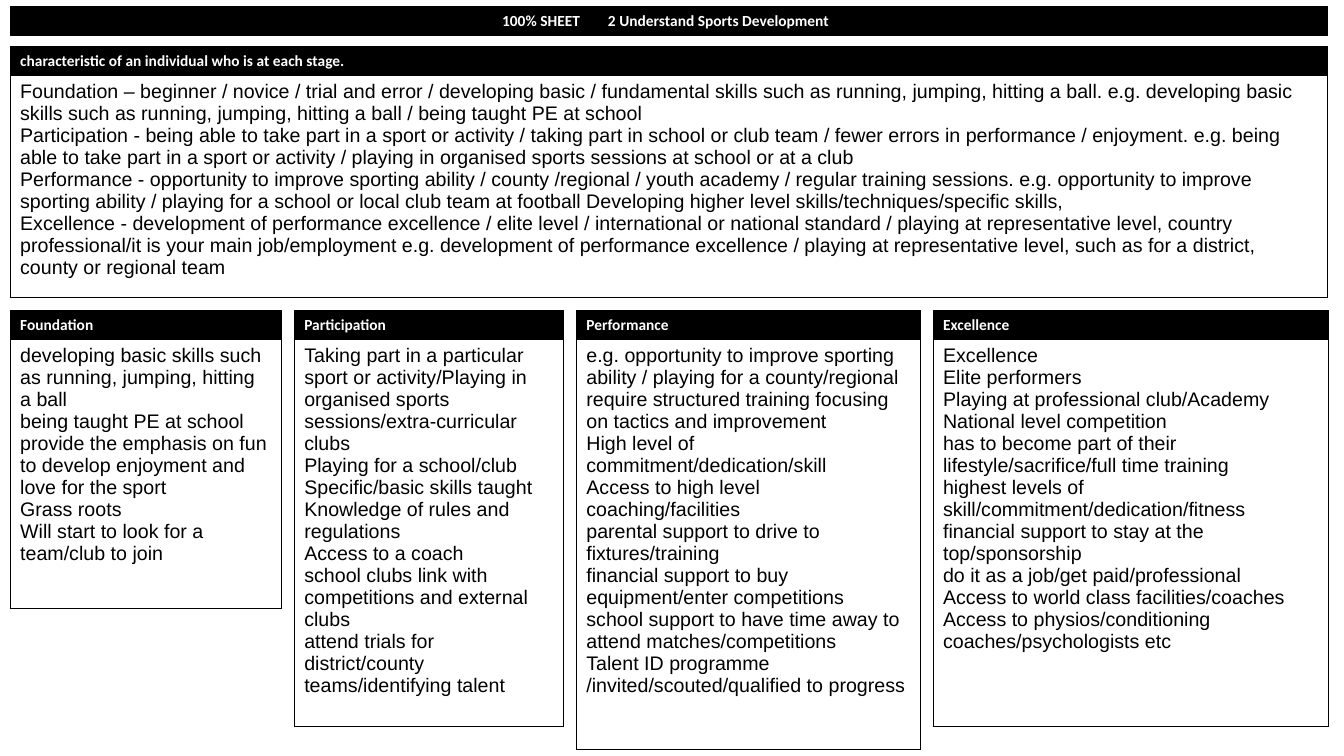
import dataclasses

import lxml.etree
import pptx
import pptx.dml.color
import pptx.enum.text
import pptx.oxml.ns
import pptx.util


@dataclasses.dataclass(frozen=True)
class Theme:
    """Colours, fonts and type sizes of the sheet."""
    black: str = "000000"
    white: str = "FFFFFF"
    heading_font: str = "Calibri"
    body_font: str = "Arial"
    heading_size: float = 11
    body_size: float = 14
    line_width: float = 0.75


@dataclasses.dataclass(frozen=True)
class Box:
    """An area of the slide, in percent of its width and height."""
    left: float
    top: float
    width: float
    height: float

    def place(self):
        """Return left, top, width and height as slide lengths."""
        return [int(share * side / 100) for share, side in
                zip((self.left, self.top, self.width, self.height),
                    (SLIDE_WIDTH, SLIDE_HEIGHT) * 2)]


THEME = Theme()
SLIDE_WIDTH = pptx.util.Inches(13.33)
SLIDE_HEIGHT = pptx.util.Inches(7.5)
HEADER_HEIGHT = pptx.util.Inches(0.28)
MARGIN, CONTENT_WIDTH, GAP = 0.75, 98.05, 0.96
STAGES_TOP = 41.07

TITLE = "100% SHEET\t2 Understand Sports Development"

OVERVIEW_HEADING = "characteristic of an individual who is at each stage."
OVERVIEW = [
    "Foundation – beginner / novice / trial and error / developing basic / fundamental skills such as "
    "running, jumping, hitting a ball. e.g. developing basic skills such as running, jumping, hitting "
    "a ball / being taught PE at school",
    "Participation - being able to take part in a sport or activity / taking part in school or club "
    "team / fewer errors in performance / enjoyment. e.g. being able to take part in a sport or "
    "activity / playing in organised sports sessions at school or at a club",
    "Performance - opportunity to improve sporting ability / county /regional / youth academy / "
    "regular training sessions. e.g. opportunity to improve sporting ability / playing for a school "
    "or local club team at football Developing higher level skills/techniques/specific skills,",
    "Excellence - development of performance excellence / elite level / international or national "
    "standard / playing at representative level, country professional/it is your main "
    "job/employment e.g. development of performance excellence / playing at representative level, "
    "such as for a district, county or regional team",
]

STAGES = [
    ("Foundation", 20.18, 39.33, [
        "developing basic skills such as running, jumping, hitting a ball",
        "being taught PE at school",
        "provide the emphasis on fun to develop enjoyment and love for the sport",
        "Grass roots",
        "Will start to look for a team/club to join",
    ]),
    ("Participation", 20.03, 54.93, [
        "Taking part in a particular sport or activity/Playing in organised sports "
        "sessions/extra-curricular clubs",
        "Playing for a school/club",
        "Specific/basic skills taught",
        "Knowledge of rules and regulations",
        "Access to a coach",
        "school clubs link with competitions and external clubs",
        "attend trials for district/county teams/identifying talent",
    ]),
    ("Performance", 25.58, 58, [
        "e.g. opportunity to improve sporting ability / playing for a county/regional",
        "require structured training focusing on tactics and improvement",
        "High level of commitment/dedication/skill",
        "Access to high level coaching/facilities",
        "parental support to drive to fixtures/training",
        "financial support to buy equipment/enter competitions",
        "school support to have time away to attend matches/competitions",
        "Talent ID programme /invited/scouted/qualified to progress",
    ]),
    ("Excellence", 29.41, 54.93, [
        "Excellence",
        "Elite performers",
        "Playing at professional club/Academy",
        "National level competition",
        "has to become part of their lifestyle/sacrifice/full time training",
        "highest levels of skill/commitment/dedication/fitness",
        "financial support to stay at the top/sponsorship",
        "do it as a job/get paid/professional",
        "Access to world class facilities/coaches",
        "Access to physios/conditioning coaches/psychologists etc",
    ]),
]


def colour(value):
    """Return an RGB colour from its hex form."""
    return pptx.dml.color.RGBColor.from_string(value)


def add_element(parent, tag, **attributes):
    """Append a drawing element to its parent."""
    return lxml.etree.SubElement(parent, pptx.oxml.ns.qn(tag), attributes)


def write(frame, lines, heading):
    """Fill a text frame with paragraphs in the heading or body style."""
    frame.text = "\n".join(lines)
    for para in frame.paragraphs:
        font = para.font
        font.name = THEME.heading_font if heading else THEME.body_font
        font.size = pptx.util.Pt(THEME.heading_size if heading else THEME.body_size)
        font.bold = heading
        font.color.rgb = colour(THEME.white if heading else THEME.black)


def outline(cell):
    """Draw a thin black border on all sides of a cell."""
    properties = cell._tc.get_or_add_tcPr()
    for side in ("L", "R", "T", "B"):
        line = add_element(properties, f"a:ln{side}", w=str(pptx.util.Pt(THEME.line_width)))
        add_element(add_element(line, "a:solidFill"), "a:srgbClr", val=THEME.black)


def add_title(page, box):
    """Turn the title placeholder into the black banner."""
    title = page.shapes.title
    title.left, title.top, title.width, title.height = box.place()
    title.fill.solid()
    title.fill.fore_color.rgb = colour(THEME.black)
    title.line.color.rgb = colour(THEME.black)
    title.line.width = pptx.util.Pt(THEME.line_width)
    frame = title.text_frame
    write(frame, [TITLE], heading=True)
    frame.auto_size = pptx.enum.text.MSO_AUTO_SIZE.NONE
    frame.vertical_anchor = pptx.enum.text.MSO_ANCHOR.MIDDLE
    frame.margin_left = pptx.util.Inches(4.88)
    para = frame.paragraphs[0]
    para.alignment = pptx.enum.text.PP_ALIGN.LEFT
    stops = add_element(para._p.get_or_add_pPr(), "a:tabLst")
    add_element(stops, "a:tab", pos=str(pptx.util.Inches(1.05)), algn="l")
    para._p.pPr.insert(0, stops)


def add_panel(page, box, heading, lines):
    """Add a table with a black heading row above a body row."""
    left, top, width, height = box.place()
    table = page.shapes.add_table(2, 1, left, top, width, height).table
    table.first_row = table.horz_banding = False
    table.rows[0].height = HEADER_HEIGHT
    table.rows[1].height = height - HEADER_HEIGHT
    header, body = table.cell(0, 0), table.cell(1, 0)
    outline(header)
    outline(body)
    header.fill.solid()
    header.fill.fore_color.rgb = colour(THEME.black)
    body.fill.background()
    write(header.text_frame, [heading], heading=True)
    write(body.text_frame, lines, heading=False)


def add_stages(page, left, top):
    """Set the stage panels side by side with equal gaps."""
    for heading, width, height, lines in STAGES:
        add_panel(page, Box(left, top, width, height), heading, lines)
        left += width + GAP


def main():
    """Build the sheet and save it."""
    deck = pptx.Presentation()
    deck.slide_width, deck.slide_height = SLIDE_WIDTH, SLIDE_HEIGHT
    page = deck.slides.add_slide(deck.slide_layouts.get_by_name("Title Only"))
    add_title(page, Box(MARGIN, 0.8, CONTENT_WIDTH, 3.87))
    add_panel(page, Box(MARGIN, 6.13, CONTENT_WIDTH, 33.07), OVERVIEW_HEADING, OVERVIEW)
    add_stages(page, MARGIN, STAGES_TOP)
    deck.save("out.pptx")


if __name__ == "__main__":
    main()
